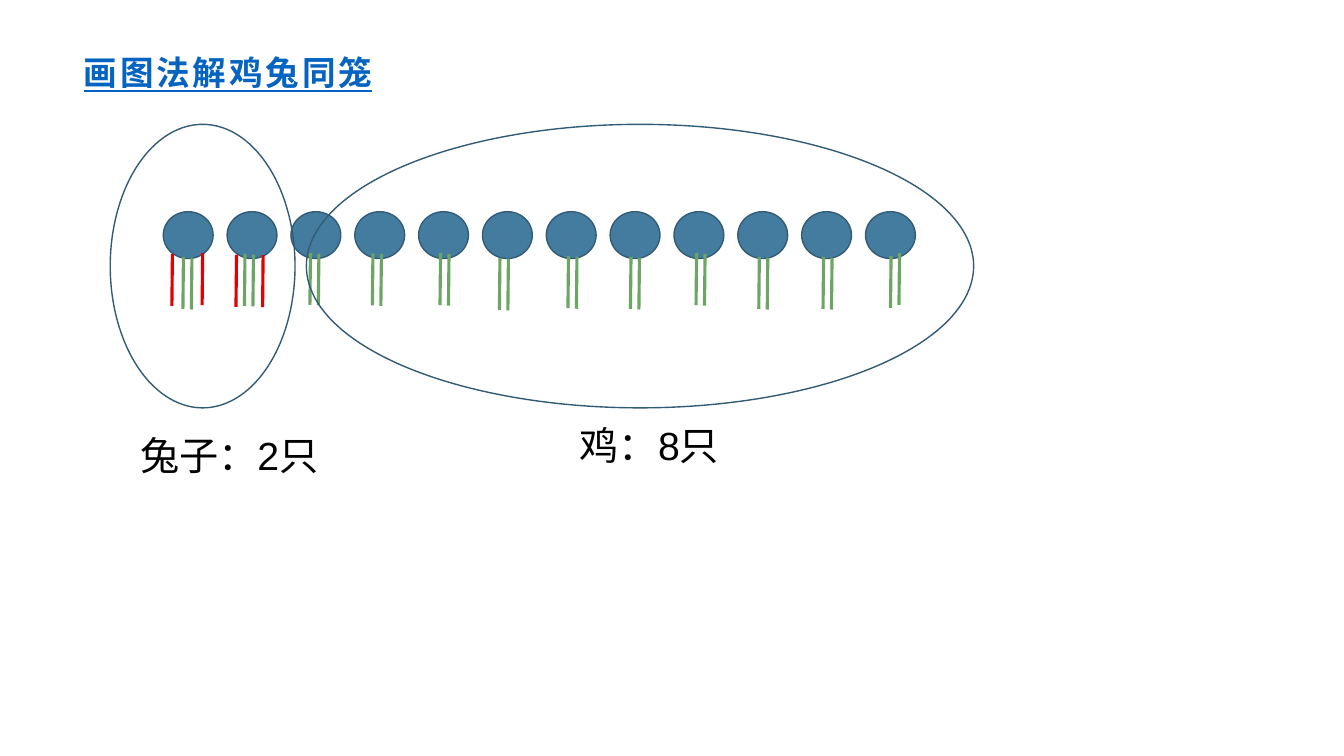
from dataclasses import dataclass

from lxml.etree import SubElement
from pptx import Presentation
from pptx.dml.color import RGBColor
from pptx.enum.shapes import MSO_CONNECTOR, MSO_SHAPE
from pptx.enum.text import MSO_ANCHOR, PP_ALIGN
from pptx.oxml.ns import qn
from pptx.util import Inches, Pt

COLORS = {"title": "0563C1", "head": "447CA0", "outline": "325C76",
          "leg": "6CA564", "extra_leg": "E30000", "text": "000000"}
CJK_FONT = "Noto Sans CJK SC"
SLIDE_W, SLIDE_H = Inches(13.333), Inches(7.5)

# All positions and sizes are percentages of the slide's width or height.
HEAD_LEFT, HEAD_TOP, HEAD_W, HEAD_H = 12.15, 28, 3.71, 6.2
HEAD_PITCH = 4.75
LEG_GAP, LEG_SLANT, LEG_LENGTH = 0.63, 0.04, 6.87


@dataclass
class Box:
    left: float
    top: float
    width: float
    height: float

    def emu(self) -> tuple[int, int, int, int]:
        return (share(self.left, SLIDE_W), share(self.top, SLIDE_H),
                share(self.width, SLIDE_W), share(self.height, SLIDE_H))


@dataclass
class LegPair:
    x: float
    y: float
    right_drop: float = 0.07


@dataclass
class Group:
    oval: Box
    label_box: Box
    label: str


LEG_PAIRS = [
    LegPair(13.65, 34), LegPair(18.23, 33.6), LegPair(23.1, 33.47),
    LegPair(27.75, 33.53), LegPair(32.78, 33.5), LegPair(37.2, 34.13),
    LegPair(42.3, 33.9), LegPair(46.95, 34), LegPair(51.83, 33.5),
    LegPair(56.5, 34), LegPair(61.28, 34), LegPair(66.3, 33.87, -0.4),
]
EXTRA_LEGS = [(12.83, 33.6), (15.08, 33.5), (17.6, 33.73), (19.58, 33.75)]
GROUPS = [
    Group(Box(8.2, 16.45, 13.75, 37.5), Box(9.68, 56.4, 18.08, 7.6), "兔子：2只"),
    Group(Box(22.8, 16.45, 49.65, 37.5), Box(42.4, 55.07, 14.1, 7.6), "鸡：8只"),
]


def share(percent: float, total: int) -> int:
    return round(total * percent / 100)


def rgb(name: str) -> RGBColor:
    return RGBColor.from_string(COLORS[name])


def write(tf, text: str, color: str, **font) -> None:
    p = tf.paragraphs[0]
    p.alignment = PP_ALIGN.LEFT
    r = p.add_run()
    r.text = text
    for name, value in font.items():
        setattr(r.font, name, value)
    r.font.color.rgb = rgb(color)
    SubElement(r.font._element, qn("a:ea")).set("typeface", CJK_FONT)


def add_title(s, text: str) -> None:
    title = s.shapes.title
    title.left, title.top, title.width, title.height = Box(5.48, 6.4, 25.65, 6.4).emu()
    tf = title.text_frame
    tf.vertical_anchor = MSO_ANCHOR.MIDDLE
    write(tf, text, "title", name=CJK_FONT, size=Pt(24), bold=True, underline=True)
    tf.paragraphs[0].runs[0].font._element.set("spc", "200")


def add_oval(s, box: Box, fill: str | None = None) -> None:
    sp = s.shapes.add_shape(MSO_SHAPE.OVAL, *box.emu())
    sp.shadow.inherit = False
    sp.line.color.rgb = rgb("outline")
    sp.line.width = Pt(1)
    if fill:
        sp.fill.solid()
        sp.fill.fore_color.rgb = rgb(fill)
    else:
        sp.fill.background()


def add_leg(s, x: float, y: float, color: str) -> None:
    leg = s.shapes.add_connector(
        MSO_CONNECTOR.STRAIGHT, share(x, SLIDE_W), share(y, SLIDE_H),
        share(x - LEG_SLANT, SLIDE_W), share(y + LEG_LENGTH, SLIDE_H))
    leg.line.color.rgb = rgb(color)
    leg.line.width = Pt(2.25)
    SubElement(leg._element.spPr, qn("a:effectLst"))


def add_group(s, group: Group) -> None:
    """Circle one kind of animal and write its count below."""
    add_oval(s, group.oval)
    tf = s.shapes.add_textbox(*group.label_box.emu()).text_frame
    tf.word_wrap = True
    write(tf, group.label, "text", name="Arial", size=Pt(28))


def main() -> None:
    prs = Presentation()
    prs.slide_width, prs.slide_height = SLIDE_W, SLIDE_H
    s = prs.slides.add_slide(prs.slide_layouts[5])
    add_title(s, "画图法解鸡兔同笼")
    for i in range(len(LEG_PAIRS)):
        add_oval(s, Box(HEAD_LEFT + i * HEAD_PITCH, HEAD_TOP, HEAD_W, HEAD_H), "head")
    for pair in LEG_PAIRS:
        add_leg(s, pair.x, pair.y, "leg")
        add_leg(s, pair.x + LEG_GAP, pair.y + pair.right_drop, "leg")
    for x, y in EXTRA_LEGS:
        add_leg(s, x, y, "extra_leg")
    for group in GROUPS:
        add_group(s, group)
    prs.save("out.pptx")


if __name__ == "__main__":
    main()
